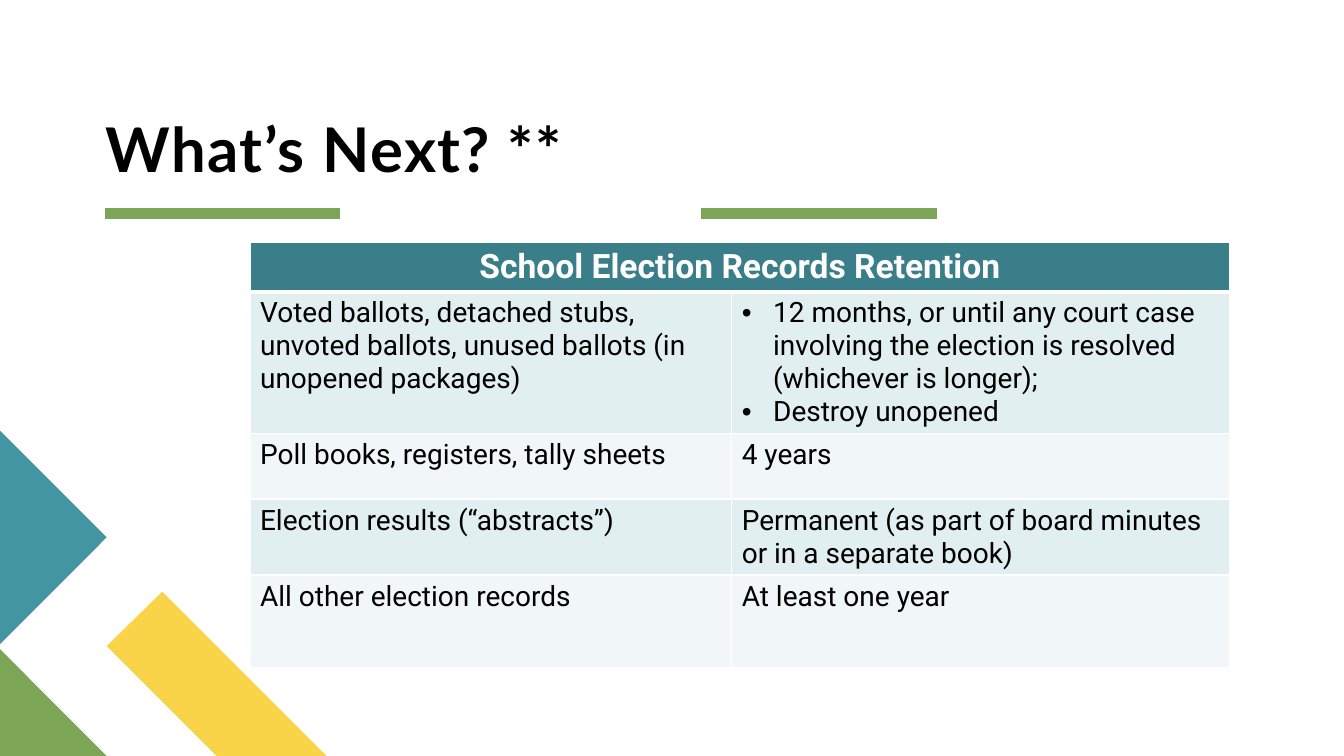
from lxml import etree
from pptx import Presentation
from pptx import util as u
from pptx.dml.color import RGBColor
from pptx.enum import shapes, text
from pptx.oxml.ns import qn

# Content
TITLE = "What’s Next? **"
HEADER = "School Election Records Retention"
RECORDS = [
    ("Voted ballots, detached stubs, unvoted ballots, unused ballots (in unopened packages)",
     ["12 months, or until any court case involving the election is resolved "
      "(whichever is longer);", "Destroy unopened"]),
    ("Poll books, registers, tally sheets", "4 years"),
    ("Election results (“abstracts”)", "Permanent (as part of board minutes or in a separate book)"),
    ("All other election records", "At least one year"),
]

# Theme
THEME = {
    "yellow": "F9D448", "green": "7CA655", "blue": "4495A2",
    "header": "397E89", "bands": ("E2EFF1", "F1F7F8"),
    "white": "FFFFFF", "black": "000000",
    "title_font": "Lato", "body_font": "Roboto",
    "title_size": 44, "header_size": 24, "body_size": 20,
}

# Geometry in centimetres
WIDTH, HEIGHT = 33.87, 19.05
CORNER = 2.69
DECOR = [
    ("yellow", [(8.23, HEIGHT), (5.46, HEIGHT), (CORNER, 16.28), (4.09, 14.91)]),
    ("green", [(CORNER, HEIGHT), (0, HEIGHT), (0, HEIGHT - CORNER)]),
    ("blue", [(0, 10.85), (CORNER, 13.54), (0, 16.23)]),
]
RULE_LEFTS, RULE_TOP, RULE_LENGTH = (2.64, 17.67), 5.39, 5.94
TITLE_BOX = (2.67, 2.44, 22.02, 2.24)
TABLE_LEFT, TABLE_TOP = 6.3, 6.1
COLUMNS = (12.14, 12.55)
ROWS = (0.97, 3.18, 1.65, 1.7, 2.34)
INDENT = 0.79


def rgb(name):
    return RGBColor.from_string(THEME.get(name, name))


def set_all(target, values):
    for name, value in values.items():
        setattr(target, name, value)


def write(p, words, font, size, colour, bold=False):
    r = p.add_run()
    r.text = words
    set_all(r.font, {"name": THEME[font], "size": u.Pt(THEME[size]), "bold": bold})
    r.font.color.rgb = rgb(colour)
    return r


def add_bullet(p):
    pPr = p._p.get_or_add_pPr()
    pPr.set("marL", str(u.Cm(INDENT)))
    pPr.set("indent", str(-u.Cm(INDENT)))
    etree.SubElement(pPr, qn("a:buFont")).set("typeface", "Arial")
    etree.SubElement(pPr, qn("a:buChar")).set("char", "•")


def add_borders(cell, widths):
    tcPr = cell._tc.get_or_add_tcPr()
    for place, (side, width) in enumerate(widths.items()):
        ln = etree.Element(qn(f"a:ln{side}"), w=str(u.Pt(width)))
        fill = etree.SubElement(ln, qn("a:solidFill"))
        etree.SubElement(fill, qn("a:srgbClr")).set("val", THEME["white"])
        tcPr.insert(place, ln)


def add_decor(s):
    for colour, points in DECOR:
        start, *rest = [(u.Cm(x), u.Cm(y)) for x, y in points]
        builder = s.shapes.build_freeform(*start)
        builder.add_line_segments(rest, close=True)
        sp = builder.convert_to_shape()
        sp.shadow.inherit = False
        sp.fill.solid()
        sp.fill.fore_color.rgb = rgb(colour)
        sp.line.fill.background()

    for left in RULE_LEFTS:
        rule = s.shapes.add_connector(
            shapes.MSO_CONNECTOR.STRAIGHT, u.Cm(left), u.Cm(RULE_TOP),
            u.Cm(left + RULE_LENGTH), u.Cm(RULE_TOP))
        rule.line.color.rgb = rgb("green")
        rule.line.width = u.Pt(8)
        etree.SubElement(rule._element.spPr, qn("a:effectLst"))


def add_title(s):
    sp = s.shapes.title
    set_all(sp, dict(zip(("left", "top", "width", "height"), map(u.Cm, TITLE_BOX))))
    tf = sp.text_frame
    set_all(tf, {"margin_left": 0, "margin_top": 0, "margin_right": 0, "margin_bottom": 0,
                 "word_wrap": True, "auto_size": text.MSO_AUTO_SIZE.NONE,
                 "vertical_anchor": text.MSO_ANCHOR.BOTTOM})
    p = tf.paragraphs[0]
    set_all(p, {"alignment": text.PP_ALIGN.LEFT, "line_spacing": 0.9})
    r = write(p, TITLE, "title_font", "title_size", "black", True)
    r.font._element.set("spc", "100")


def add_records(s):
    table = s.shapes.add_table(
        len(ROWS), len(COLUMNS), u.Cm(TABLE_LEFT), u.Cm(TABLE_TOP),
        u.Cm(sum(COLUMNS)), u.Cm(sum(ROWS))).table
    for column, width in zip(table.columns, COLUMNS):
        column.width = u.Cm(width)
    for row, height in zip(table.rows, ROWS):
        row.height = u.Cm(height)

    # Fills and borders
    for i, row in enumerate(table.rows):
        for cell in row.cells:
            cell.fill.solid()
            cell.fill.fore_color.rgb = rgb(THEME["bands"][(i - 1) % 2] if i else "header")
            add_borders(cell, {"L": 1, "R": 1, "T": 3 if i == 1 else 1, "B": 1 if i else 3})

    # Header
    head = table.cell(0, 0)
    head.merge(table.cell(0, 1))
    p = head.text_frame.paragraphs[0]
    p.alignment = text.PP_ALIGN.CENTER
    write(p, HEADER, "body_font", "header_size", "white", True)

    # Records and how long to keep them
    for i, record in enumerate(RECORDS, 1):
        for j, entry in enumerate(record):
            tf = table.cell(i, j).text_frame
            bulleted = isinstance(entry, list)
            for k, words in enumerate(entry if bulleted else [entry]):
                p = tf.add_paragraph() if k else tf.paragraphs[0]
                if bulleted:
                    add_bullet(p)
                write(p, words, "body_font", "body_size", "black")


def main():
    prs = Presentation()
    set_all(prs, {"slide_width": u.Cm(WIDTH), "slide_height": u.Cm(HEIGHT)})
    s = prs.slides.add_slide(prs.slide_layouts[5])
    s.background.fill.solid()
    s.background.fill.fore_color.rgb = rgb("white")
    add_decor(s)
    add_title(s)
    add_records(s)
    prs.save("out.pptx")


if __name__ == "__main__":
    main()
